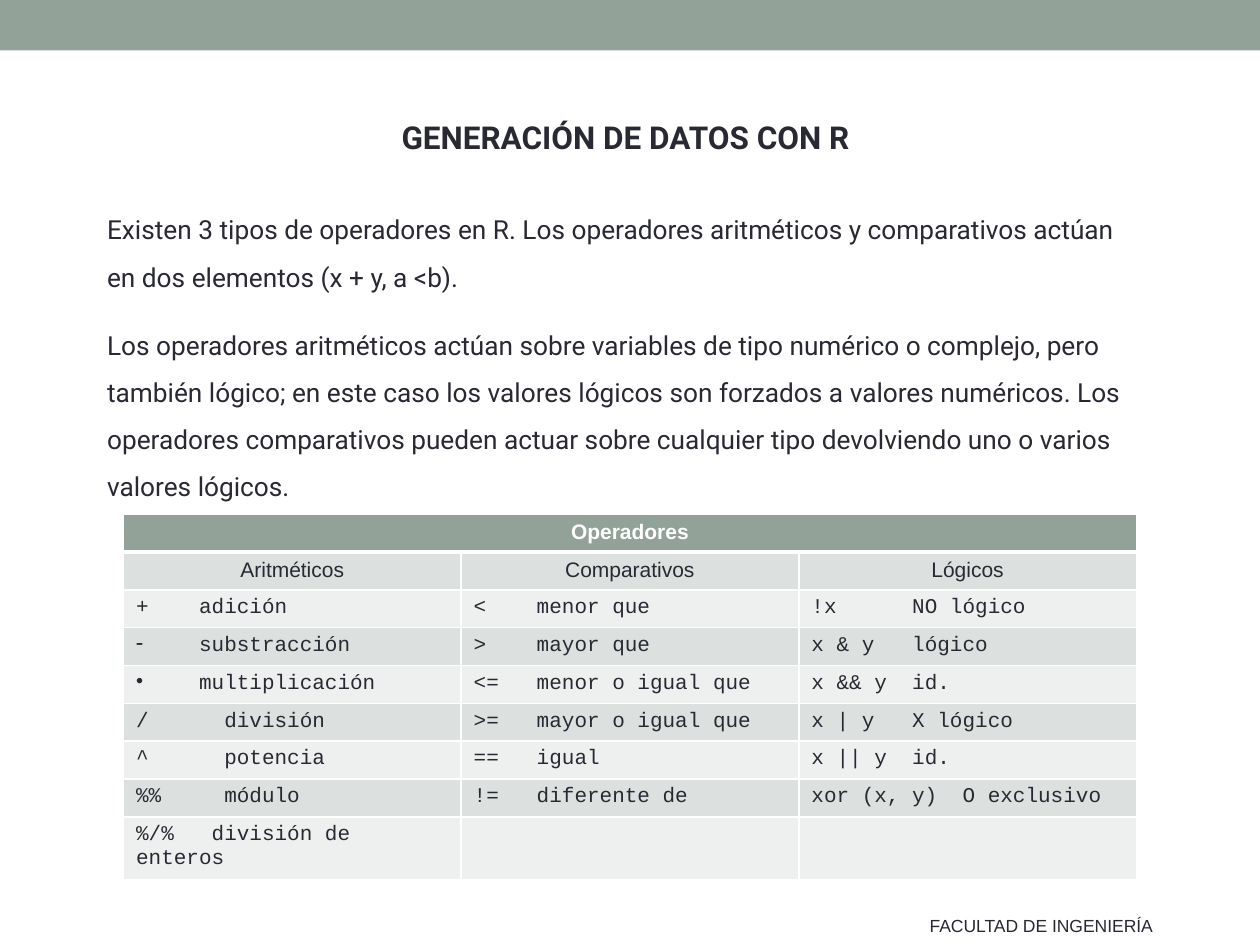
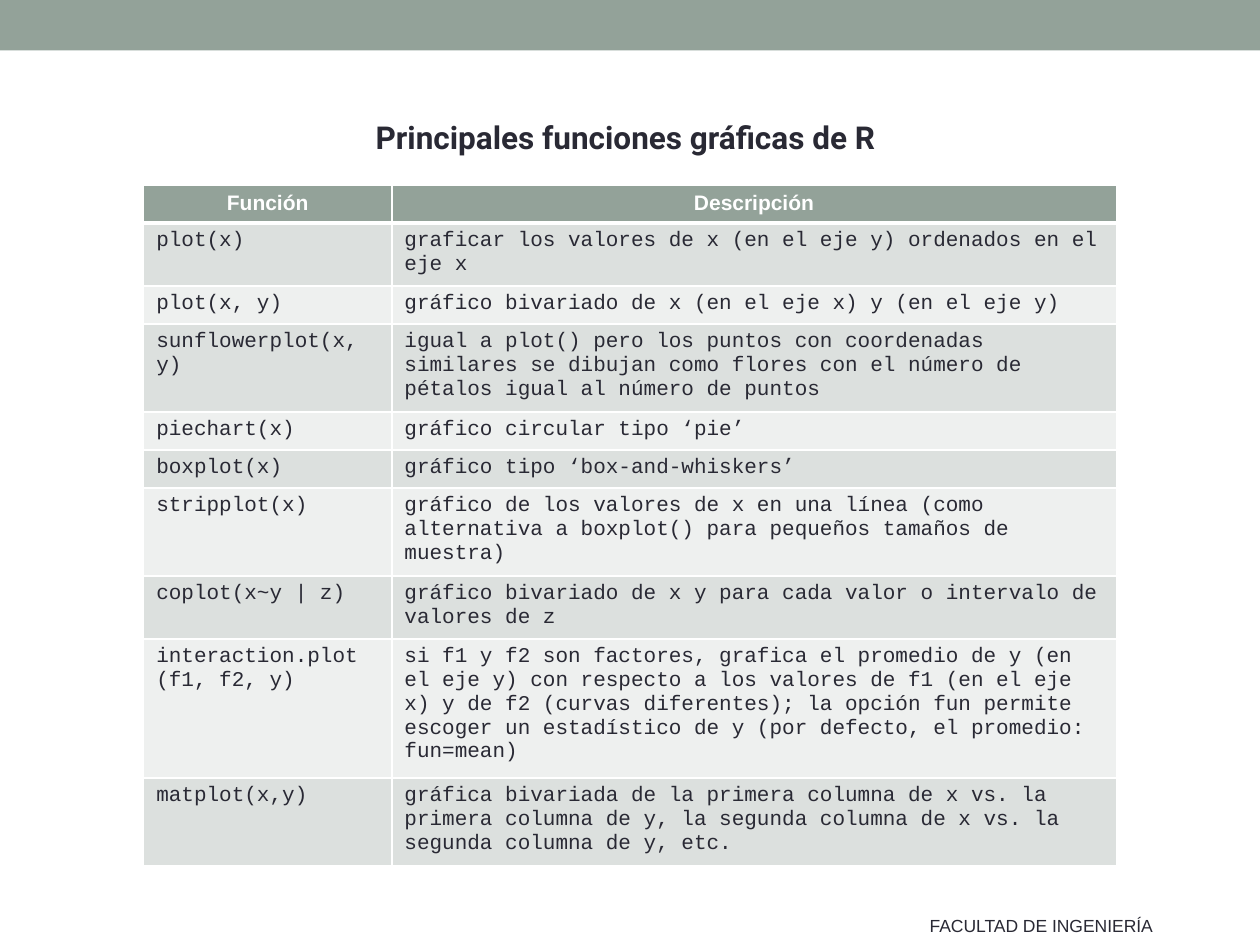
from dataclasses import dataclass

from lxml.etree import SubElement
from pptx import Presentation
from pptx.dml.color import RGBColor
from pptx.enum.shapes import MSO_SHAPE
from pptx.enum.text import MSO_ANCHOR, PP_ALIGN
from pptx.oxml import parse_xml
from pptx.oxml.ns import nsdecls, qn
from pptx.util import Inches, Pt


@dataclass(frozen=True)
class Theme:
    accent: str = "93A299"
    ink: str = "292934"
    white: str = "FFFFFF"
    bands: tuple = ("DCE0DE", "EEF0EF")
    title_font: str = "Roboto"
    label_font: str = "Arial"
    code_font: str = "Courier New"
    title_size: int = 18
    body_size: int = 15
    table_size: int = 12
    footer_size: int = 10


THEME = Theme()
TITLE_BOX = (0.75, 0.89, 8.43, 0.4)
BODY_BOX = (0.75, 1.57, 8.43, 2.5)
FOOTER_BOX = (7.28, 7.21, 2.02, 0.27)
BAND_BOX = (0, 0, 10, 0.4)
LINE_HEIGHT = 0.2
CELL_PADDING = 0.1

INTRODUCTION = [
    "Existen 3 tipos de operadores en R. Los operadores aritméticos y comparativos "
    "actúan en dos elementos (x + y, a <b).",
    "Los operadores aritméticos actúan sobre variables de tipo numérico o complejo, "
    "pero también lógico; en este caso los valores lógicos son forzados a valores "
    "numéricos. Los operadores comparativos pueden actuar sobre cualquier tipo "
    "devolviendo uno o varios valores lógicos.",
]

OPERATORS = {
    "Aritméticos": [
        ("+", "adición", 0.5),
        ("-", "substracción", 0.5),
        ("•", "multiplicación", 0.5),
        ("/", "división", 0.7),
        ("^", "potencia", 0.7),
        ("%%", "módulo", 0.7),
        ("%/%", "división de enteros", 0.6),
    ],
    "Comparativos": [
        ("<", "menor que", 0.5),
        (">", "mayor que", 0.5),
        ("<=", "menor o igual que", 0.5),
        (">=", "mayor o igual que", 0.5),
        ("==", "igual", 0.5),
        ("!=", "diferente de", 0.5),
    ],
    "Lógicos": [
        ("!x", "NO lógico", 0.8),
        ("x & y", "lógico", 0.8),
        ("x && y", "id.", 0.8),
        ("x | y", "X lógico", 0.8),
        ("x || y", "id.", 0.8),
        ("xor (x, y)", "O exclusivo", 1.2),
    ],
}
BULLETED_OPERATORS = ("-", "•")

GRAPHIC_FUNCTIONS = [
    ("Función", "Descripción", 1),
    ("plot(x)", "graficar los valores de x (en el eje y) ordenados en el eje x", 2),
    ("plot(x, y)", "gráfico bivariado de x (en el eje x) y (en el eje y)", 1),
    ("sunflowerplot(x,\ny)",
     "igual a plot() pero los puntos con coordenadas similares se dibujan como "
     "flores con el número de pétalos igual al número de puntos", 3),
    ("piechart(x)", "gráfico circular tipo ‘pie’", 1),
    ("boxplot(x)", "gráfico tipo ‘box-and-whiskers’", 1),
    ("stripplot(x)",
     "gráfico de los valores de x en una línea (como alternativa a boxplot() para "
     "pequeños tamaños de muestra)", 3),
    ("coplot(x~y | z)",
     "gráfico bivariado de x y para cada valor o intervalo de valores de z", 2),
    ("interaction.plot\n(f1, f2, y)",
     "si f1 y f2 son factores, grafica el promedio de y (en el eje y) con respecto "
     "a los valores de f1 (en el eje x) y de f2 (curvas diferentes); la opción fun "
     "permite escoger un estadístico de y (por defecto, el promedio: fun=mean)", 5),
    ("matplot(x,y)",
     "gráfica bivariada de la primera columna de x vs. la primera columna de y, la "
     "segunda columna de x vs. la segunda columna de y, etc.", 3),
]


def inches(box):
    return [Inches(length) for length in box]


def place(shape, box):
    shape.left, shape.top, shape.width, shape.height = inches(box)


def format_text(text_frame, name, size, color=THEME.ink, bold=False, alignment=PP_ALIGN.LEFT):
    for paragraph in text_frame.paragraphs:
        paragraph.alignment = alignment
        for font in (paragraph.font, *(run.font for run in paragraph.runs)):
            font.name = name
            font.size = Pt(size)
            font.bold = bold
            font.color.rgb = RGBColor.from_string(color)


def add_band(slide, box):
    band = slide.shapes.add_shape(MSO_SHAPE.RECTANGLE, *inches(box))
    band.shadow.inherit = False
    band.fill.solid()
    band.fill.fore_color.rgb = RGBColor.from_string(THEME.accent)
    band.line.fill.background()


def add_footer(slide, box):
    text_frame = slide.shapes.add_textbox(*inches(box)).text_frame
    text_frame.word_wrap = False
    text_frame.text = "FACULTAD DE INGENIERÍA"
    format_text(text_frame, THEME.label_font, THEME.footer_size)


def add_framed_slide(presentation, layout_name, title):
    slide = presentation.slides.add_slide(presentation.slide_layouts.get_by_name(layout_name))
    add_band(slide, BAND_BOX)
    place(slide.shapes.title, TITLE_BOX)
    text_frame = slide.shapes.title.text_frame
    text_frame.text = title
    text_frame.margin_top = text_frame.margin_bottom = 0
    text_frame.vertical_anchor = MSO_ANCHOR.MIDDLE
    format_text(text_frame, THEME.title_font, THEME.title_size, bold=True,
                alignment=PP_ALIGN.CENTER)
    add_footer(slide, FOOTER_BOX)
    return slide


def fill_body(slide, box, texts):
    body = slide.placeholders[1]
    place(body, box)
    text_frame = body.text_frame
    text_frame.text = "\n".join(texts)
    text_frame.margin_top = text_frame.margin_bottom = 0
    for paragraph in text_frame.paragraphs:
        properties = paragraph._p.get_or_add_pPr()
        properties.set("marL", "0")
        properties.set("indent", "0")
        SubElement(properties, qn("a:buNone"))
        paragraph.line_spacing = 1.5
        paragraph.space_before = Pt(0)
        paragraph.space_after = Pt(12)
    format_text(text_frame, THEME.title_font, THEME.body_size)


def style_cell(cell, row_index, is_label):
    is_header = row_index == 0
    fill_color = THEME.accent if is_header else THEME.bands[(row_index - 1) % 2]
    cell.fill.solid()
    cell.fill.fore_color.rgb = RGBColor.from_string(fill_color)
    widths = {"lnL": 1, "lnR": 1, "lnT": 3 if row_index == 1 else 1, "lnB": 3 if is_header else 1}
    for position, (side, width) in enumerate(widths.items()):
        border = parse_xml(
            f'<a:{side} {nsdecls("a")} w="{Pt(width)}"><a:solidFill>'
            f'<a:srgbClr val="{THEME.white}"/></a:solidFill></a:{side}>')
        cell._tc.get_or_add_tcPr().insert(position, border)
    format_text(cell.text_frame,
                THEME.label_font if is_label else THEME.code_font,
                THEME.table_size,
                THEME.white if is_header else THEME.ink,
                is_header,
                PP_ALIGN.CENTER if is_label else PP_ALIGN.LEFT)


def add_styled_table(slide, position, column_widths, row_heights, fill_cells, label_rows):
    box = (*position, sum(column_widths), sum(row_heights))
    table = slide.shapes.add_table(len(row_heights), len(column_widths), *inches(box)).table
    for column, width in zip(table.columns, column_widths):
        column.width = Inches(width)
    for row, height in zip(table.rows, row_heights):
        row.height = Inches(height)
    fill_cells(table)
    for row_index, row in enumerate(table.rows):
        for cell in row.cells:
            style_cell(cell, row_index, row_index < label_rows)


def write_operator(cell, operator, meaning, offset):
    paragraph = cell.text_frame.paragraphs[0]
    properties = paragraph._p.get_or_add_pPr()
    if operator in BULLETED_OPERATORS:
        paragraph.text = meaning
        properties.set("marL", str(Inches(offset)))
        properties.set("indent", str(-Inches(offset)))
        SubElement(properties, qn("a:buChar"), char=operator)
    else:
        paragraph.text = f"{operator}\t{meaning}"
        tabs = SubElement(properties, qn("a:tabLst"))
        SubElement(tabs, qn("a:tab"), pos=str(Inches(offset)), algn="l")


def fill_operators(table):
    table.cell(0, 0).merge(table.cell(0, len(OPERATORS) - 1))
    table.cell(0, 0).text = "Operadores"
    for column_index, (family, operators) in enumerate(OPERATORS.items()):
        table.cell(1, column_index).text = family
        for row_index, entry in enumerate(operators, start=2):
            write_operator(table.cell(row_index, column_index), *entry)


def fill_functions(table):
    for row, (function, description, _) in zip(table.rows, GRAPHIC_FUNCTIONS):
        row.cells[0].text = function
        row.cells[1].text = description


def add_operators_slide(presentation):
    slide = add_framed_slide(presentation, "Title and Content", "GENERACIÓN DE DATOS CON R")
    fill_body(slide, BODY_BOX, INTRODUCTION)
    row_count = 2 + max(len(operators) for operators in OPERATORS.values())
    add_styled_table(slide, (0.98, 4.08), [2.68] * len(OPERATORS), [0.28] * row_count,
                     fill_operators, label_rows=2)


def add_functions_slide(presentation):
    slide = add_framed_slide(presentation, "Title Only", "Principales funciones gráficas de R")
    row_heights = [CELL_PADDING + LINE_HEIGHT * lines for _, _, lines in GRAPHIC_FUNCTIONS]
    add_styled_table(slide, (1.14, 1.47), [1.97, 5.75], row_heights,
                     fill_functions, label_rows=1)


def main():
    presentation = Presentation()
    presentation.slide_width = Inches(10)
    presentation.slide_height = Inches(7.5)
    add_operators_slide(presentation)
    add_functions_slide(presentation)
    presentation.save("out.pptx")


if __name__ == "__main__":
    main()
